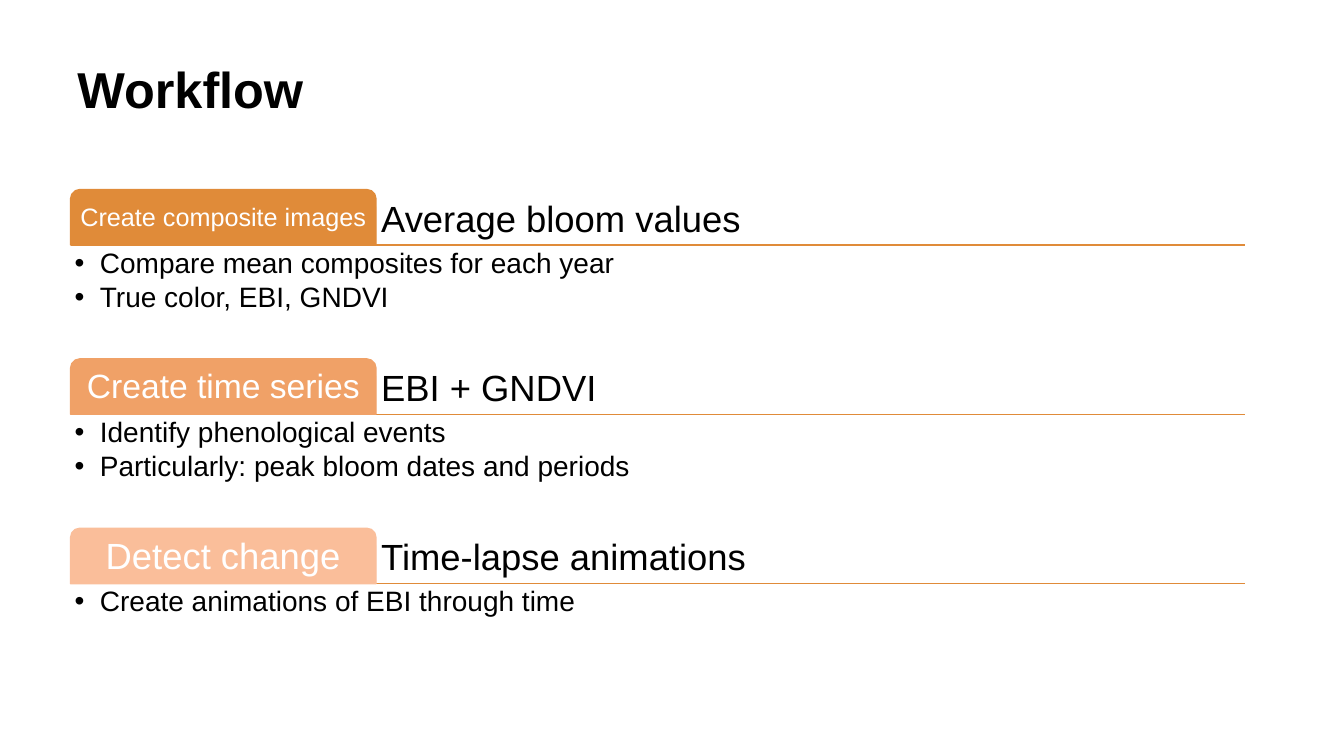
"""Build the Workflow slide: three steps, each with a tab, a heading and bullets."""
from dataclasses import dataclass

from lxml import etree
from pptx import Presentation
from pptx.dml.color import RGBColor
from pptx.enum.shapes import MSO_CONNECTOR, MSO_SHAPE
from pptx.enum.text import MSO_ANCHOR, PP_ALIGN
from pptx.oxml.ns import qn
from pptx.shapes.autoshape import Shape
from pptx.slide import Slide
from pptx.text.text import _Paragraph
from pptx.util import Inches, Pt

TAB_SHAPE = MSO_SHAPE.ROUND_2_SAME_RECTANGLE
STRAIGHT = MSO_CONNECTOR.STRAIGHT
TOP, MIDDLE, BOTTOM = MSO_ANCHOR.TOP, MSO_ANCHOR.MIDDLE, MSO_ANCHOR.BOTTOM
LEFT, CENTER = PP_ALIGN.LEFT, PP_ALIGN.CENTER

BLACK = RGBColor(0x00, 0x00, 0x00)
WHITE = RGBColor(0xFF, 0xFF, 0xFF)
ORANGE = RGBColor(0xE0, 0x8B, 0x39)
LIGHT_ORANGE = RGBColor(0xF0, 0xA1, 0x67)
PALE_ORANGE = RGBColor(0xFA, 0xBE, 0x9A)

FONT = "Arial"
STEPS_LEFT, STEPS_TOP, STEPS_WIDTH = 0.7, 1.88, 11.65
STEP_PITCH = 1.68
TAB_WIDTH, TAB_HEIGHT = 3.03, 0.55
BULLETS_HEIGHT = 1.1
BULLET_INDENT = 0.25


@dataclass(frozen=True)
class Step:
    label: str
    label_size: int
    label_inset: float
    color: RGBColor
    heading: str
    bullets: tuple[str, ...]


STEPS = (
    Step("Create composite images", 18, 0.04, ORANGE, "Average bloom values",
         ("Compare mean composites for each year", "True color, EBI, GNDVI")),
    Step("Create time series", 24, 0.05, LIGHT_ORANGE, "EBI + GNDVI",
         ("Identify phenological events", "Particularly: peak bloom dates and periods")),
    Step("Detect change", 26, 0.05, PALE_ORANGE, "Time-lapse animations",
         ("Create animations of EBI through time",)),
)


def write_text(box: Shape, text: str, size: int, color: RGBColor = BLACK,
               inset: float = 0.05, anchor: MSO_ANCHOR = TOP,
               align: PP_ALIGN = LEFT, bold: bool = False) -> None:
    frame = box.text_frame
    frame.text = text
    frame.word_wrap = True
    frame.vertical_anchor = anchor
    frame.margin_left = frame.margin_right = Inches(inset)
    frame.margin_top = frame.margin_bottom = Inches(inset)
    for para in frame.paragraphs:
        para.alignment = align
        para.line_spacing = 0.9
        for span in para.runs:
            span.font.name = FONT
            span.font.size = Pt(size)
            span.font.bold = bold
            span.font.color.rgb = color


def add_text(page: Slide, left: float, top: float, width: float, height: float) -> Shape:
    return page.shapes.add_textbox(Inches(left), Inches(top), Inches(width), Inches(height))


def add_bullet(para: _Paragraph) -> None:
    para.level = 1
    properties = para._p.get_or_add_pPr()
    properties.set("marL", str(Inches(BULLET_INDENT)))
    properties.set("indent", str(-Inches(BULLET_INDENT)))
    etree.SubElement(properties, qn("a:buFont"), typeface=FONT)
    etree.SubElement(properties, qn("a:buChar"), char="•")


def draw_rule(page: Slide, top: float) -> None:
    rule = page.shapes.add_connector(STRAIGHT, Inches(STEPS_LEFT), Inches(top),
                                     Inches(STEPS_LEFT + STEPS_WIDTH), Inches(top))
    rule.line.color.rgb = ORANGE
    rule.line.width = Pt(1)
    etree.SubElement(rule._element.spPr, qn("a:effectLst"))


def draw_tab(page: Slide, step: Step, top: float) -> None:
    tab = page.shapes.add_shape(TAB_SHAPE, Inches(STEPS_LEFT), Inches(top),
                                Inches(TAB_WIDTH), Inches(TAB_HEIGHT))
    tab.adjustments[0] = 0.17
    tab.adjustments[1] = 0
    tab.shadow.inherit = False
    tab.fill.solid()
    tab.fill.fore_color.rgb = step.color
    tab.line.color.rgb = step.color
    tab.line.width = Pt(1)
    write_text(tab, step.label, step.label_size, WHITE, step.label_inset, MIDDLE, CENTER)


def draw_step(page: Slide, step: Step, top: float) -> None:
    rule_top = top + TAB_HEIGHT
    draw_rule(page, rule_top)
    heading = add_text(page, STEPS_LEFT + TAB_WIDTH, top, STEPS_WIDTH - TAB_WIDTH, TAB_HEIGHT)
    write_text(heading, step.heading, 26, anchor=BOTTOM)
    draw_tab(page, step, top)
    details = add_text(page, STEPS_LEFT, rule_top, STEPS_WIDTH, BULLETS_HEIGHT)
    write_text(details, "\n".join(step.bullets), 20, inset=0.04)
    for index, para in enumerate(details.text_frame.paragraphs):
        para.space_before = Pt(3 if index else 0)
        add_bullet(para)


def main() -> None:
    deck = Presentation()
    deck.slide_width, deck.slide_height = Inches(13.33), Inches(7.5)
    page = deck.slides.add_slide(deck.slide_layouts[6])
    title = add_text(page, 0.67, 0.6, 11.65, 1.24)
    write_text(title, "Workflow", 36, bold=True)
    title.text_frame.margin_left = title.text_frame.margin_right = Inches(0.1)
    for index, step in enumerate(STEPS):
        draw_step(page, step, STEPS_TOP + index * STEP_PITCH)
    deck.save("out.pptx")


if __name__ == "__main__":
    main()
